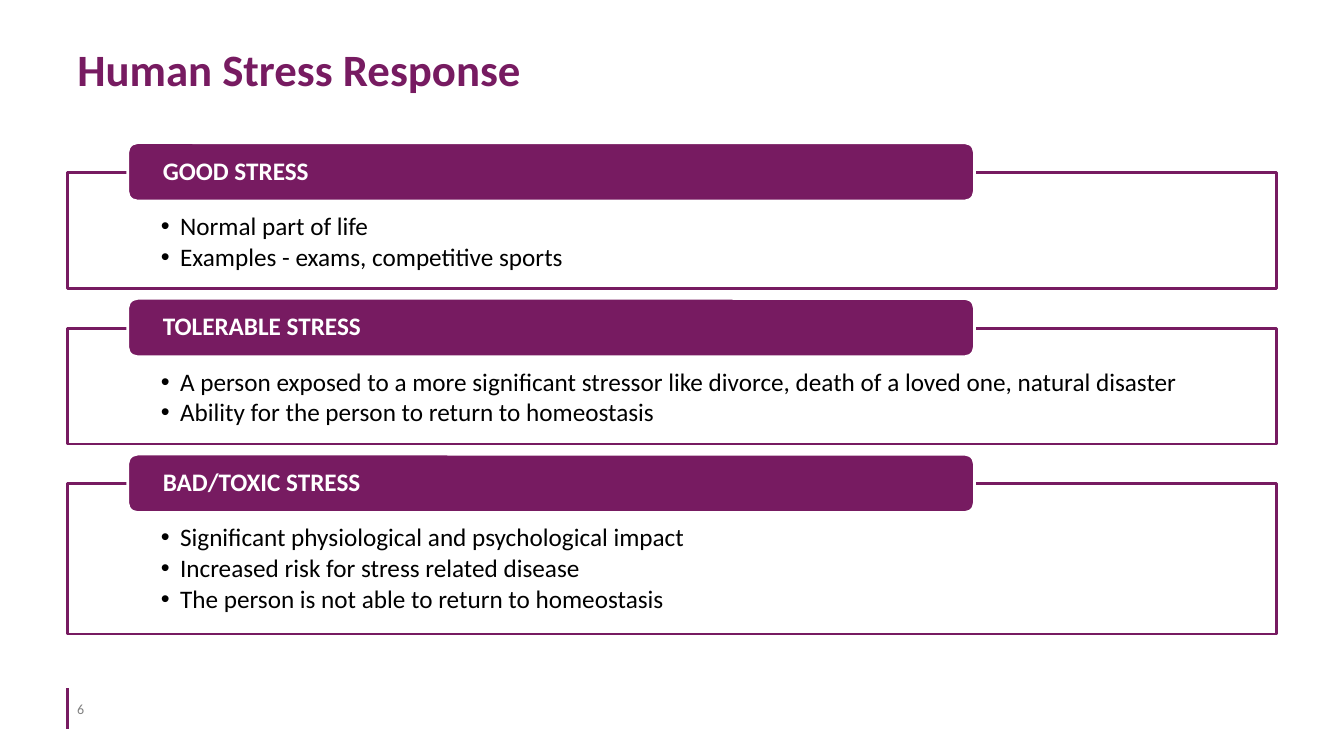
from lxml import etree
from pptx import Presentation
from pptx.dml.color import RGBColor
from pptx.enum.shapes import MSO_CONNECTOR, MSO_SHAPE
from pptx.enum.text import MSO_ANCHOR, MSO_AUTO_SIZE, PP_ALIGN
from pptx.oxml.ns import qn
from pptx.util import Inches, Pt

RECTANGLE, ROUNDED = MSO_SHAPE.RECTANGLE, MSO_SHAPE.ROUNDED_RECTANGLE
STRAIGHT = MSO_CONNECTOR.STRAIGHT
TOP, MIDDLE = MSO_ANCHOR.TOP, MSO_ANCHOR.MIDDLE
LEFT, NO_FIT = PP_ALIGN.LEFT, MSO_AUTO_SIZE.NONE

PLUM = RGBColor(0x77, 0x1B, 0x61)
WHITE = RGBColor(0xFF, 0xFF, 0xFF)
BLACK = RGBColor(0, 0, 0)
GRAY = RGBColor(0x80, 0x80, 0x80)

SLIDE_WIDTH, SLIDE_HEIGHT = Inches(13.33), Inches(7.5)
COLUMNS, ROWS = 20, 75
MARGIN, CONTENT_WIDTH = 1, 18
FIRST_PANEL, PANEL_GAP = 17.1, 3.95
PANEL_BASE, BULLET_ROWS = 4.7, 3.4
HEADER_RISE, HEADER_HEIGHT = 2.95, 5.8
FOOTER_TOP, FOOTER_HEIGHT = 68.3, 4

STRESS_TYPES = [
    ("GOOD STRESS", ["Normal part of life", "Examples - exams, competitive sports"]),
    ("TOLERABLE STRESS", [
        "A person exposed to a more significant stressor like divorce, "
        "death of a loved one, natural disaster",
        "Ability for the person to return to homeostasis",
    ]),
    ("BAD/TOXIC STRESS", [
        "Significant physiological and psychological impact",
        "Increased risk for stress related disease",
        "The person is not able to return to homeostasis",
    ]),
]


class StressSlide:
    """Draws styled elements on a slide divided into columns and rows."""

    font_name = "Calibri"

    def __init__(self, deck):
        self.slide = deck.slides.add_slide(deck.slide_layouts[5])
        self.shapes = self.slide.shapes

    def place(self, left, top, width, height):
        column, row = SLIDE_WIDTH / COLUMNS, SLIDE_HEIGHT / ROWS
        return [round(value) for value in (left * column, top * row, width * column, height * row)]

    def add_text(self, box, lines, size, color, bold=False, anchor=MIDDLE,
                 insets=(0.1, 0.05, 0.1, 0.05), spacing=1.0, bullets=False):
        frame = box.text_frame
        sides = ("margin_left", "margin_top", "margin_right", "margin_bottom")
        settings = dict(zip(sides, map(Inches, insets)))
        settings.update(word_wrap=True, auto_size=NO_FIT, vertical_anchor=anchor)
        for name, value in settings.items():
            setattr(frame, name, value)
        for index, line in enumerate(lines):
            para = frame.add_paragraph() if index else frame.paragraphs[0]
            layout = {"alignment": LEFT, "line_spacing": spacing,
                      "space_before": Pt(0), "space_after": Pt(2.4 if bullets else 0)}
            for name, value in layout.items():
                setattr(para, name, value)
            if bullets:
                self.add_bullet(para)
            span = para.add_run()
            span.text = line
            style = {"name": self.font_name, "size": Pt(size), "bold": bold}
            for name, value in style.items():
                setattr(span.font, name, value)
            span.font.color.rgb = color

    def add_bullet(self, para):
        properties = para._p.get_or_add_pPr()
        properties.set("marL", str(Inches(0.19)))
        properties.set("indent", str(Inches(-0.19)))
        etree.SubElement(properties, qn("a:buFont"), typeface="Arial")
        etree.SubElement(properties, qn("a:buChar"), char="•")

    def add_title(self, text, *area):
        title = self.shapes.title
        title.left, title.top, title.width, title.height = self.place(*area)
        self.add_text(title, [text], 32, PLUM, bold=True)

    def add_box(self, kind, area, fill, outline):
        box = self.shapes.add_shape(kind, *self.place(*area))
        box.shadow.inherit = False
        box.fill.solid()
        box.fill.fore_color.rgb = fill
        box.line.color.rgb = outline
        box.line.width = Pt(2)
        return box

    def add_panel(self, heading, bullets, top, height):
        panel = self.add_box(RECTANGLE, (MARGIN, top, CONTENT_WIDTH, height), WHITE, PLUM)
        self.add_text(panel, bullets, 18, BLACK, anchor=TOP,
                      insets=(0.93, 0.41, 0.93, 0.14), spacing=0.9, bullets=True)
        header = self.add_box(ROUNDED, (1.9, top - HEADER_RISE, 12.6, HEADER_HEIGHT), PLUM, WHITE)
        self.add_text(header, [heading], 18, WHITE, bold=True,
                      insets=(0.32, 0, 0.32, 0), spacing=0.9)

    def add_page_number(self, number):
        area = self.place(MARGIN, FOOTER_TOP, 0.92, FOOTER_HEIGHT)
        self.add_text(self.shapes.add_textbox(*area), [number], 10, GRAY)
        left, top, _, height = area
        rule = self.shapes.add_connector(STRAIGHT, left, top + height, left, top)
        rule.line.color.rgb = PLUM
        rule.line.width = Pt(2.25)
        etree.SubElement(rule._element.spPr, qn("a:effectLst"))


def main():
    deck = Presentation()
    deck.slide_width, deck.slide_height = SLIDE_WIDTH, SLIDE_HEIGHT
    page = StressSlide(deck)
    page.add_title("Human Stress Response", MARGIN, 1.6, CONTENT_WIDTH, 10.4)
    top = FIRST_PANEL
    for heading, bullets in STRESS_TYPES:
        height = PANEL_BASE + BULLET_ROWS * len(bullets)
        page.add_panel(heading, bullets, top, height)
        top += height + PANEL_GAP
    page.add_page_number("6")
    deck.save("out.pptx")


if __name__ == "__main__":
    main()
